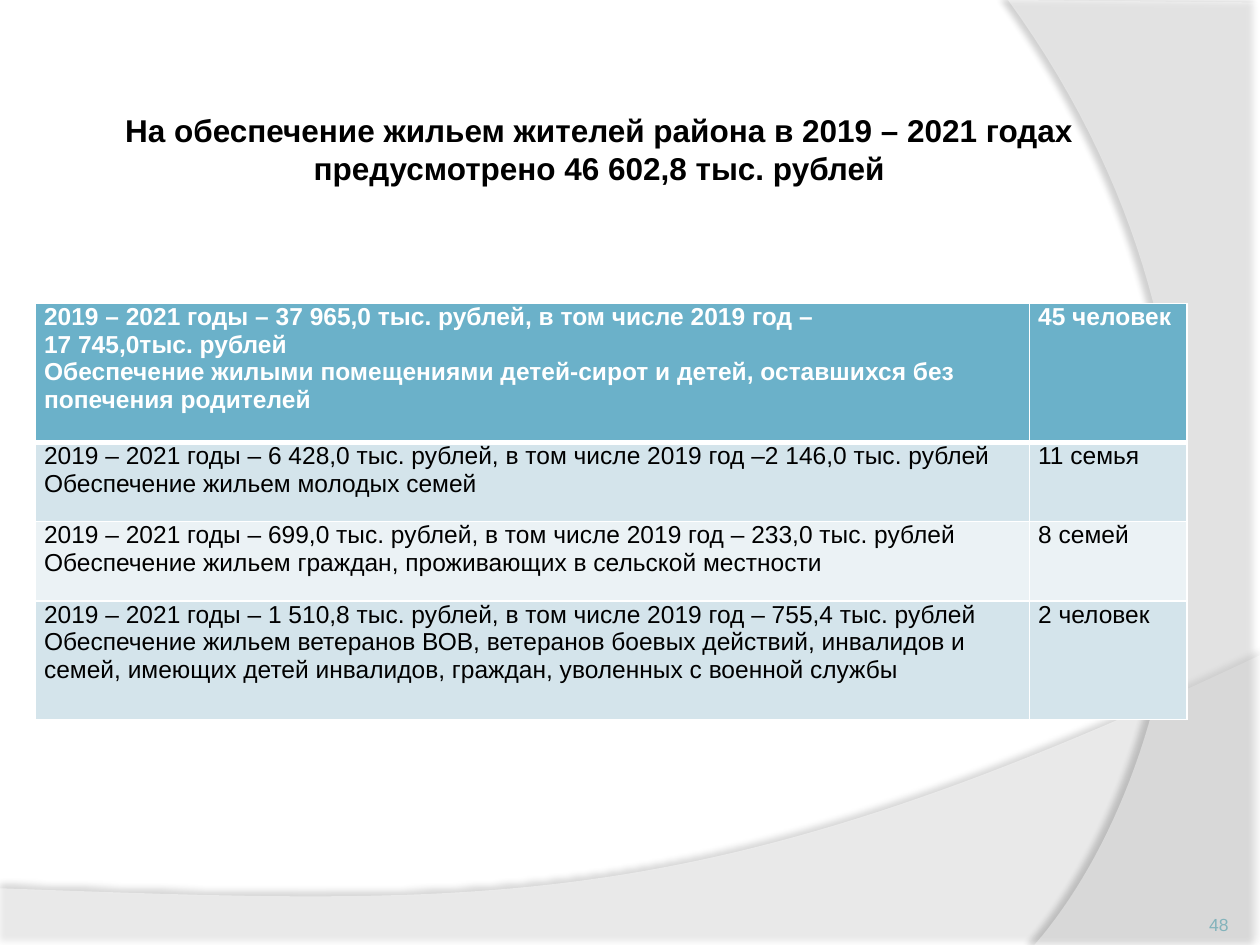
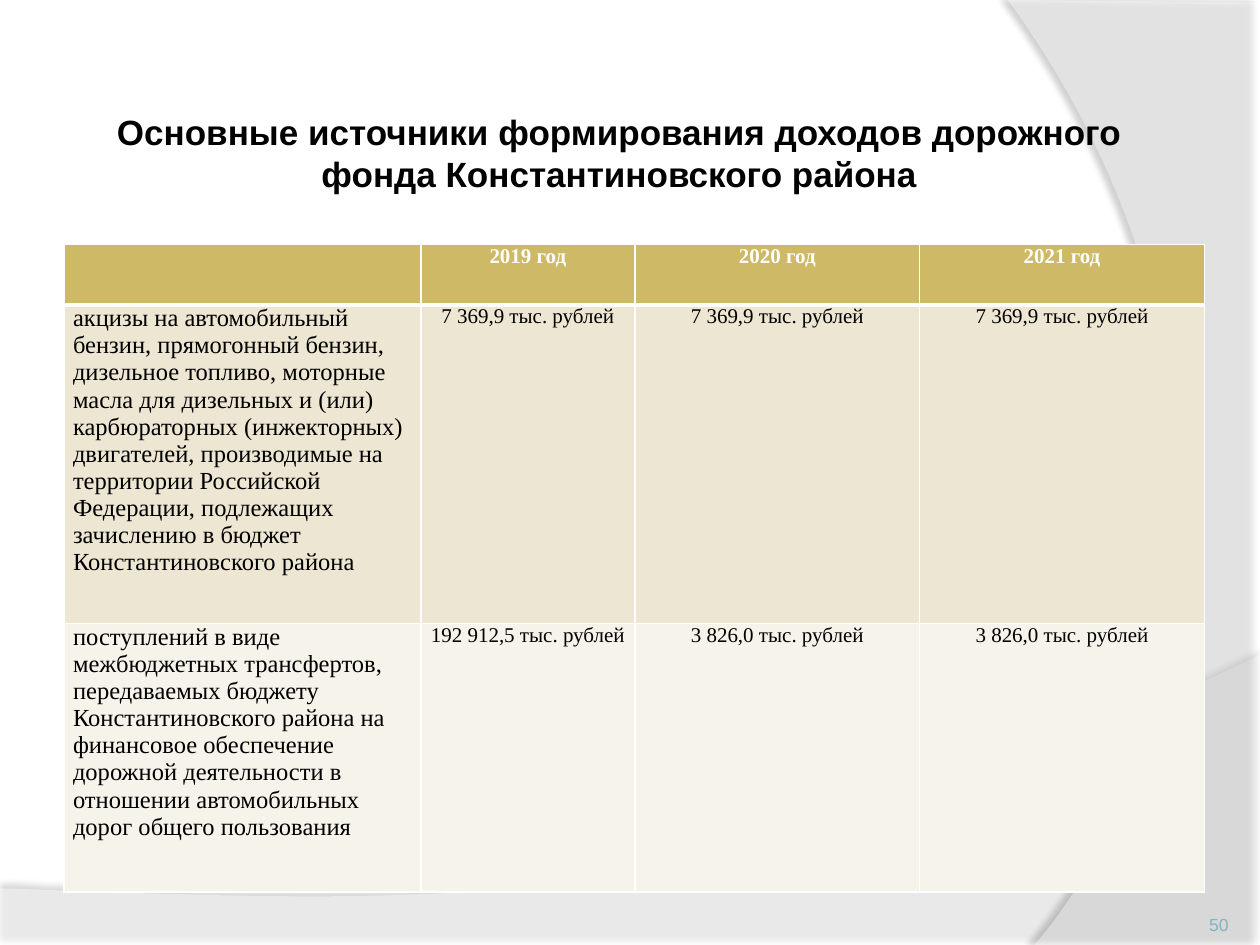
from dataclasses import dataclass

from lxml import etree
from pptx import Presentation
from pptx.dml.color import RGBColor
from pptx.enum import text
from pptx.oxml import ns
from pptx.util import Inches, Pt

WHITE, BLACK, NUMBER_COLOR = "FFFFFF", "000000", "83B3BB"
SANS, SERIF = "Arial", "Times New Roman"
CENTER, LEFT, RIGHT = text.PP_ALIGN.CENTER, text.PP_ALIGN.LEFT, text.PP_ALIGN.RIGHT
CURVE_STEPS = 60

Point = tuple[float, float]


@dataclass(frozen=True)
class Sweep:
    """A translucent background shape: straight edges closed by one Bézier curve."""
    corners: list[Point]
    curve: tuple[Point, Point, Point]
    opacity: int
    shadow_opacity: int
    shadow_distance: float
    shadow_angle: int


@dataclass(frozen=True)
class TextStyle:
    size: int
    font: str = SANS
    color: str = BLACK
    bold: bool = False
    align: text.PP_ALIGN = LEFT


@dataclass(frozen=True)
class TablePlan:
    left: float
    top: float
    columns: list[float]
    rows: list[float]
    header_fill: str
    band_fills: tuple[str, str]
    header: TextStyle
    label: TextStyle
    value: TextStyle
    cells: list[list[str]]


@dataclass(frozen=True)
class SlidePlan:
    title: str
    title_size: int
    title_box: tuple[float, float, float, float]
    number: str
    table: TablePlan


SWEEPS = [
    Sweep([(0, 7.05), (0, 7.51), (10, 7.51), (10, 5.2)],
          ((5.59, 7.29), (3.91, 7.19), (0, 7.05)), 45, 35, 3.5, 270),
    Sweep([(10, 0.02), (10, 7.5), (8.21, 7.5)],
          ((9.35, 6.19), (10.18, 3), (8, 0)), 40, 45, 4, 180),
]

HOUSING = TablePlan(
    0.28, 2.41, [7.89, 1.25], [1.1, 0.63, 0.63, 0.94],
    "6BB1C9", ("D4E4EB", "EBF2F5"),
    TextStyle(14, color=WHITE, bold=True), TextStyle(14), TextStyle(14),
    [
        ["2019 – 2021 годы – 37 965,0 тыс. рублей, в том числе 2019 год –\v17 745,0тыс. рублей\n"
         "Обеспечение жилыми помещениями детей-сирот и детей, оставшихся без попечения родителей",
         "45 человек"],
        ["2019 – 2021 годы – 6 428,0 тыс. рублей, в том числе 2019 год –2 146,0 тыс. рублей\n"
         "Обеспечение жильем молодых семей",
         "11 семья"],
        ["2019 – 2021 годы – 699,0 тыс. рублей, в том числе 2019 год – 233,0 тыс. рублей\n"
         "Обеспечение жильем граждан, проживающих в сельской местности",
         "8 семей"],
        ["2019 – 2021 годы – 1 510,8 тыс. рублей, в том числе 2019 год – 755,4 тыс. рублей\n"
         "Обеспечение жильем ветеранов ВОВ, ветеранов боевых действий, инвалидов и семей, "
         "имеющих детей инвалидов, граждан, уволенных с военной службы",
         "2 человек"],
    ])

ROAD_FUND = TablePlan(
    0.51, 1.94, [2.83, 1.7, 2.26, 2.26], [0.48, 2.53, 2.13],
    "CEB966", ("EDE6D3", "F6F3EA"),
    TextStyle(12, SERIF, WHITE, True, CENTER),
    TextStyle(14, SERIF), TextStyle(12, SERIF, align=CENTER),
    [
        ["", *(f"{year} год" for year in range(2019, 2022))],
        ["акцизы на автомобильный бензин, прямогонный бензин, дизельное топливо, моторные масла "
         "для дизельных и (или) карбюраторных (инжекторных) двигателей, производимые на территории "
         "Российской Федерации, подлежащих зачислению в бюджет Константиновского района",
         *["7 369,9 тыс. рублей"] * 3],
        ["поступлений в виде межбюджетных трансфертов, передаваемых бюджету Константиновского "
         "района на финансовое обеспечение дорожной деятельности в отношении автомобильных дорог "
         "общего пользования",
         "192 912,5 тыс. рублей", *["3 826,0 тыс. рублей"] * 2],
    ])

SLIDES = [
    SlidePlan("На обеспечение жильем жителей района в 2019 – 2021 годах предусмотрено "
              "46 602,8 тыс. рублей", 18, (0.43, 0.8, 8.65, 5.23), "48", HOUSING),
    SlidePlan("Основные источники формирования доходов дорожного фонда Константиновского района",
              20, (0.35, 0.8, 9.13, 6.18), "50", ROAD_FUND),
]


def rgb(color: str) -> RGBColor:
    return RGBColor.from_string(color)


def add_element(parent, tag: str, **attributes):
    element = etree.SubElement(parent, ns.qn(tag))
    for name, value in attributes.items():
        element.set(name, str(value))
    return element


def curve_points(start: Point, curve: tuple[Point, Point, Point]) -> list[Point]:
    """Points along a cubic Bézier curve, without its start."""
    def at(t: float) -> Point:
        weights = ((1 - t) ** 3, 3 * t * (1 - t) ** 2, 3 * t ** 2 * (1 - t), t ** 3)
        x, y = (sum(w * p[axis] for w, p in zip(weights, (start, *curve))) for axis in (0, 1))
        return x, y
    return [at(step / CURVE_STEPS) for step in range(1, CURVE_STEPS + 1)]


def draw_sweep(slide, sweep: Sweep) -> None:
    outline = sweep.corners + curve_points(sweep.corners[-1], sweep.curve)
    start, *others = [(Inches(x), Inches(y)) for x, y in outline]
    builder = slide.shapes.build_freeform(*start)
    builder.add_line_segments(others, close=True)
    shape = builder.convert_to_shape()
    shape.line.fill.background()
    shape.fill.solid()
    shape.fill.fore_color.rgb = rgb(WHITE)
    properties = shape.element.spPr
    fill_color = properties.find(ns.qn("a:solidFill")).find(ns.qn("a:srgbClr"))
    add_element(fill_color, "a:alpha", val=sweep.opacity * 1000)
    shape.shadow.inherit = False
    shadow = add_element(properties.find(ns.qn("a:effectLst")), "a:outerShdw",
                         blurRad=Pt(4), dist=Pt(sweep.shadow_distance),
                         dir=sweep.shadow_angle * 60000, algn="ctr", rotWithShape=0)
    shadow_color = add_element(shadow, "a:srgbClr", val=BLACK)
    add_element(shadow_color, "a:alpha", val=sweep.shadow_opacity * 1000)


def write(frame, content: str, style: TextStyle) -> None:
    """Fill a text frame, one paragraph for each line."""
    frame.text = content
    for paragraph in frame.paragraphs:
        paragraph.alignment = style.align
        formats = {"size": Pt(style.size), "name": style.font, "bold": style.bold}
        for name, value in formats.items():
            setattr(paragraph.font, name, value)
        paragraph.font.color.rgb = rgb(style.color)


def add_text(slide, box: tuple[float, float, float, float], content: str, style: TextStyle,
             side_margin: float, top_margin: float, anchor: text.MSO_ANCHOR) -> None:
    frame = slide.shapes.add_textbox(*map(Inches, box)).text_frame
    formats = {"word_wrap": True, "vertical_anchor": anchor,
               "margin_left": Inches(side_margin), "margin_right": Inches(side_margin),
               "margin_top": Inches(top_margin), "margin_bottom": 0}
    for name, value in formats.items():
        setattr(frame, name, value)
    write(frame, content, style)


def add_borders(cell, top: float, bottom: float) -> None:
    properties = cell._tc.get_or_add_tcPr()
    for side, width in {"L": 1, "R": 1, "T": top, "B": bottom}.items():
        line = add_element(properties, f"a:ln{side}", w=Pt(width))
        add_element(add_element(line, "a:solidFill"), "a:srgbClr", val=WHITE)


def draw_table(slide, plan: TablePlan) -> None:
    table = slide.shapes.add_table(
        len(plan.rows), len(plan.columns), Inches(plan.left), Inches(plan.top),
        Inches(sum(plan.columns)), Inches(sum(plan.rows))).table
    table.horz_banding = False
    for column, width in zip(table.columns, plan.columns):
        column.width = Inches(width)
    for row_index, (row, height) in enumerate(zip(table.rows, plan.rows)):
        row.height = Inches(height)
        is_header = row_index == 0
        fill = plan.header_fill if is_header else plan.band_fills[(row_index - 1) % 2]
        for column_index, cell in enumerate(row.cells):
            add_borders(cell, 3 if row_index == 1 else 1, 3 if is_header else 1)
            cell.fill.solid()
            cell.fill.fore_color.rgb = rgb(fill)
            margins = {"margin_left": Inches(0.07), "margin_right": Inches(0.07),
                       "margin_top": 0, "margin_bottom": 0}
            for name, value in margins.items():
                setattr(cell, name, value)
            body_style = plan.value if column_index else plan.label
            write(cell.text_frame, plan.cells[row_index][column_index],
                  plan.header if is_header else body_style)


def draw_slide(presentation, plan: SlidePlan) -> None:
    slide = presentation.slides.add_slide(presentation.slide_layouts[6])
    for sweep in SWEEPS:
        draw_sweep(slide, sweep)
    add_text(slide, plan.title_box, plan.title,
             TextStyle(plan.title_size, bold=True, align=CENTER),
             0.2, 0.08, text.MSO_ANCHOR.TOP)
    draw_table(slide, plan.table)
    add_text(slide, (8.92, 7.02, 0.83, 0.4), plan.number,
             TextStyle(10, color=NUMBER_COLOR, align=RIGHT), 0, 0, text.MSO_ANCHOR.BOTTOM)


def main() -> None:
    presentation = Presentation()
    presentation.slide_width, presentation.slide_height = Inches(10), Inches(7.5)
    for plan in SLIDES:
        draw_slide(presentation, plan)
    presentation.save("out.pptx")


if __name__ == "__main__":
    main()
